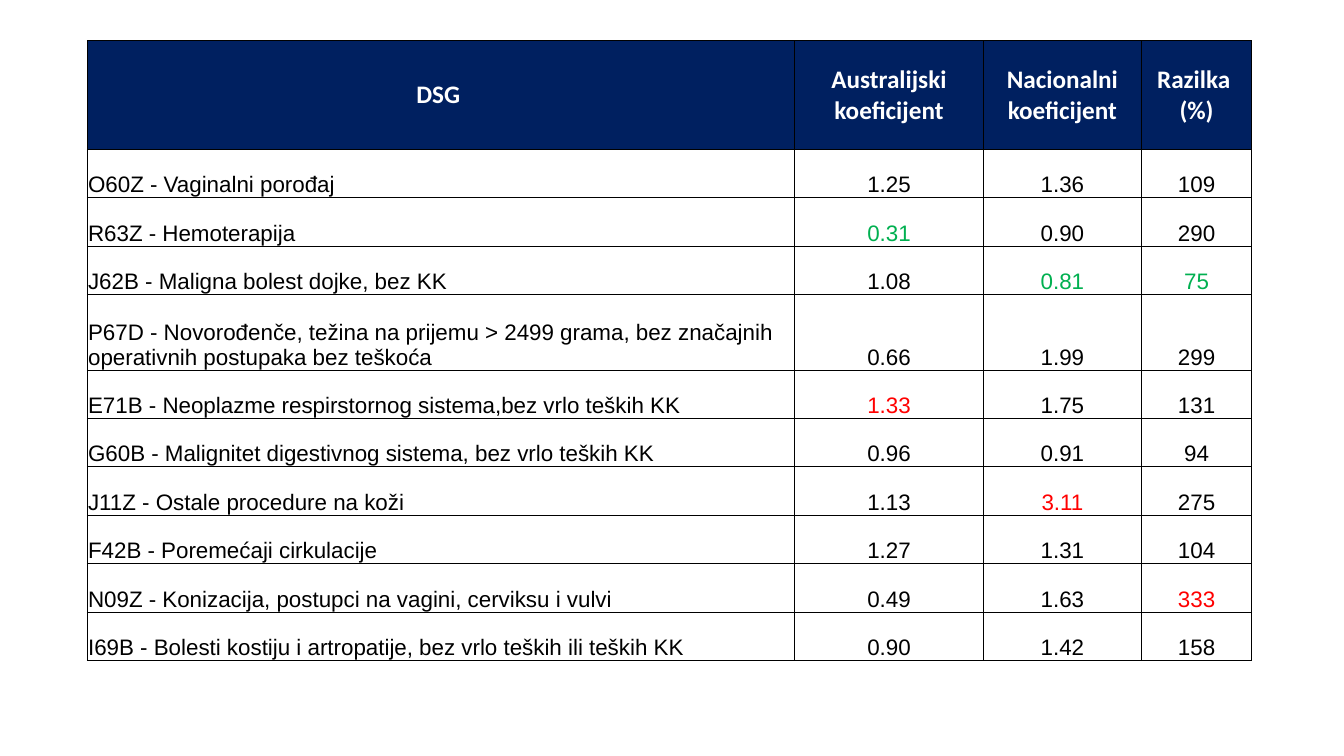
from lxml.etree import fromstring
from pptx import Presentation
from pptx.dml.color import RGBColor
from pptx.enum.text import MSO_ANCHOR, PP_ALIGN
from pptx.oxml.ns import nsdecls
from pptx.util import Cm, Pt

NAVY = RGBColor(0x00, 0x20, 0x60)
WHITE = RGBColor(0xFF, 0xFF, 0xFF)
BLACK = RGBColor(0x00, 0x00, 0x00)
GREEN = RGBColor(0x00, 0xB0, 0x50)
RED = RGBColor(0xFF, 0x00, 0x00)

HEADS = ["DSG ", "Australijski koeficijent", "Nacionalni koeficijent", "Razilka \n(%)"]
GROUPS = [
    ("O60Z - Vaginalni porođaj", "1.25", "1.36", "109"),
    ("R63Z - Hemoterapija", "0.31", "0.90", "290"),
    ("J62B - Maligna bolest dojke, bez KK", "1.08", "0.81", "75"),
    ("P67D - Novorođenče, težina na prijemu > 2499 grama, bez značajnih "
     "operativnih postupaka bez teškoća", "0.66", "1.99", "299"),
    ("E71B - Neoplazme respirstornog sistema,bez vrlo teških KK", "1.33", "1.75", "131"),
    ("G60B - Malignitet digestivnog sistema, bez vrlo teških KK", "0.96", "0.91", "94"),
    ("J11Z - Ostale procedure na koži", "1.13", "3.11", "275"),
    ("F42B - Poremećaji cirkulacije", "1.27", "1.31", "104"),
    ("N09Z - Konizacija, postupci na vagini, cerviksu i vulvi", "0.49", "1.63", "333"),
    ("I69B - Bolesti kostiju i artropatije, bez vrlo teških ili teških KK",
     "0.90", "1.42", "158"),
]
WIDTHS = [17.83, 4.75, 3.99, 2.77]
HEAD, ROW, TALL = 2.74, 1.22, 1.9
LONG = 80  # a name with more letters than this takes two lines

HEAD_FONT = {"name": "Calibri", "size": Pt(18), "bold": True}
BODY_FONT = {"name": "Arial", "size": Pt(16), "bold": False}
INSETS = {"margin_left": Cm(0.02), "margin_right": Cm(0.02),
          "margin_top": Cm(0.02), "margin_bottom": 0}


def apply(target, values):
    for name, value in values.items():
        setattr(target, name, value)


def frame(cell):
    """Draw a thin black line on all four sides of the cell."""
    props = cell._tc.get_or_add_tcPr()
    for place, side in enumerate("LRTB"):
        props.insert(place, fromstring(
            f'<a:ln{side} {nsdecls("a")} w="{Pt(0.5)}"><a:solidFill>'
            f'<a:srgbClr val="{BLACK}"/></a:solidFill></a:ln{side}>'))


def write(cell, text, font, color, align, anchor, fill=None):
    cell.text = text
    apply(cell, INSETS)
    cell.vertical_anchor = anchor
    if fill is None:
        cell.fill.background()
    else:
        cell.fill.solid()
        cell.fill.fore_color.rgb = fill
    for para in cell.text_frame.paragraphs:
        para.alignment = align
        for run in para.runs:
            apply(run.font, font)
            run.font.color.rgb = color
    frame(cell)


def tint(text, column):
    """Return green for the lowest value of a column and red for the highest."""
    values = [float(item) for item in column]
    return {min(values): GREEN, max(values): RED}.get(float(text), BLACK)


def add_rates(slide, left, top):
    heights = [HEAD] + [TALL if len(group[0]) > LONG else ROW for group in GROUPS]
    table = slide.shapes.add_table(
        len(heights), len(WIDTHS), Cm(left), Cm(top),
        Cm(sum(WIDTHS)), Cm(sum(heights))).table
    table.horz_banding = False
    for column, width in zip(table.columns, WIDTHS):
        column.width = Cm(width)
    for row, height in zip(table.rows, heights):
        row.height = Cm(height)

    for col, text in enumerate(HEADS):
        write(table.cell(0, col), text, HEAD_FONT, WHITE,
              PP_ALIGN.CENTER, MSO_ANCHOR.MIDDLE, NAVY)
    columns = list(zip(*GROUPS))
    for row, (name, *rates) in enumerate(GROUPS, 1):
        write(table.cell(row, 0), name, BODY_FONT, BLACK,
              PP_ALIGN.LEFT, MSO_ANCHOR.BOTTOM, WHITE)
        for col, rate in enumerate(rates, 1):
            write(table.cell(row, col), rate, BODY_FONT, tint(rate, columns[col]),
                  PP_ALIGN.CENTER, MSO_ANCHOR.BOTTOM)


def main():
    deck = Presentation()
    deck.slide_width, deck.slide_height = Cm(33.87), Cm(19.05)
    slide = deck.slides.add_slide(deck.slide_layouts[6])
    add_rates(slide, 2.2, 1.02)
    deck.save("out.pptx")


if __name__ == "__main__":
    main()
